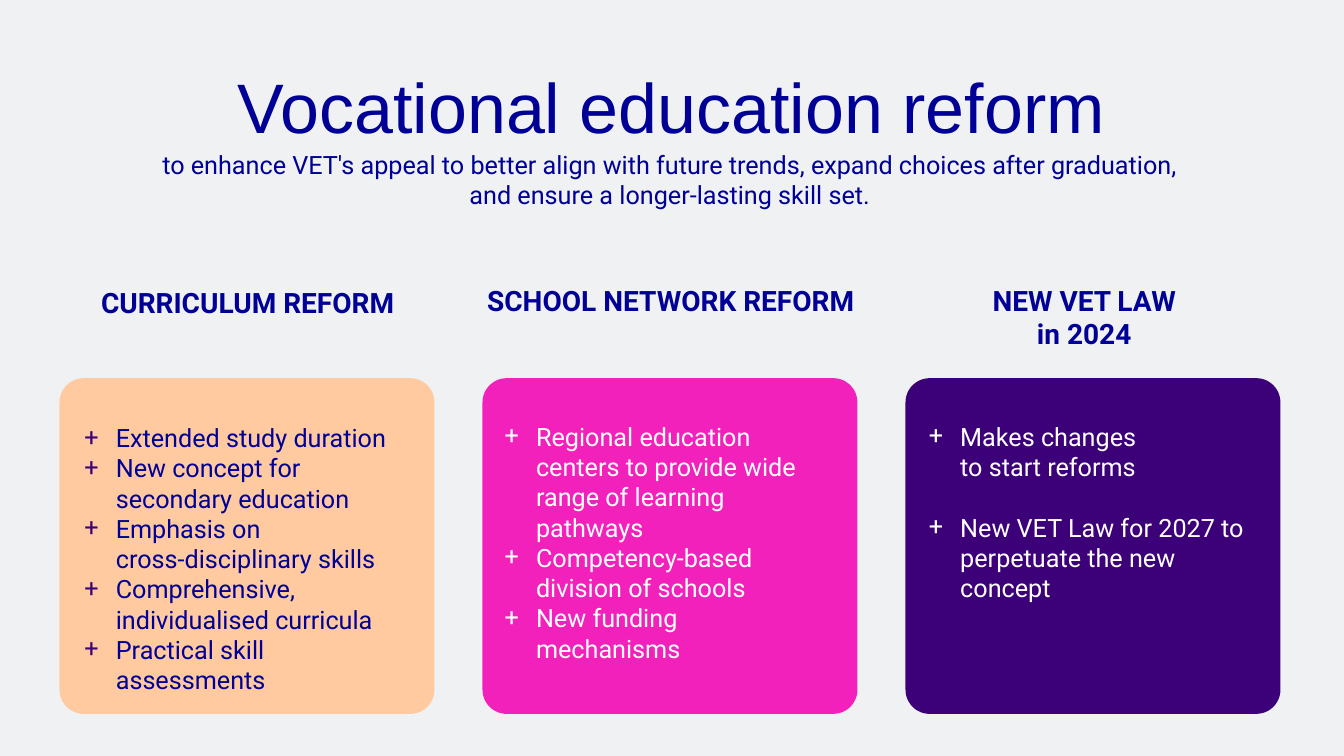
from pptx import Presentation
from pptx import util as u
from pptx.dml.color import RGBColor
from pptx.enum import shapes, text
from pptx.oxml.ns import qn
from lxml import etree

NAVY, PURPLE, WHITE = "000096", "3C0078", "FFFFFF"
PEACH, PINK, PAPER = "FFCA9F", "F321BC", "F0F1F2"


def colour(hex_code):
    return RGBColor.from_string(hex_code)


class ReformSlide:
    body_font = "Roboto"
    title_font = "Arial"
    indent = u.Cm(0.79)

    def __init__(self, deck):
        self.slide = deck.slides.add_slide(deck.slide_layouts[6])
        self.slide.background.fill.solid()
        self.slide.background.fill.fore_color.rgb = colour(PAPER)

    def card(self, left, top, width, height, fill):
        card = self.slide.shapes.add_shape(
            shapes.MSO_SHAPE.ROUNDED_RECTANGLE,
            u.Cm(left), u.Cm(top), u.Cm(width), u.Cm(height))
        card.adjustments[0] = 0.072
        card.shadow.inherit = False
        card.fill.solid()
        card.fill.fore_color.rgb = colour(fill)
        card.line.fill.background()

    def frame(self, left, top, width, height):
        box = self.slide.shapes.add_textbox(
            u.Cm(left), u.Cm(top), u.Cm(width), u.Cm(height))
        box.text_frame.word_wrap = True
        return box.text_frame

    def paragraphs(self, frame, items, size, ink, font=body_font, bold=False):
        """Add one paragraph per item; a newline inside an item is a line break."""
        for number, item in enumerate(items):
            paragraph = frame.add_paragraph() if number else frame.paragraphs[0]
            for row, words in enumerate(item.split("\n")):
                if row:
                    paragraph.add_line_break()
                run = paragraph.add_run()
                run.text = words
                run.font.name = font
                run.font.size = u.Pt(size)
                run.font.bold = bold
                run.font.color.rgb = colour(ink)
        return frame.paragraphs

    def title(self, words, *place):
        frame = self.frame(*place)
        frame.margin_left = frame.margin_right = 0
        frame.margin_top = frame.margin_bottom = 0
        line, = self.paragraphs(frame, [words], 50, NAVY, self.title_font)
        line.alignment = text.PP_ALIGN.CENTER
        line.line_spacing = 0.9

    def centred(self, lines, size, bold, *place):
        frame = self.frame(*place)
        for line in self.paragraphs(frame, lines, size, NAVY, bold=bold):
            line.alignment = text.PP_ALIGN.CENTER

    def plus_list(self, points, ink, plus_ink, gap, *place):
        frame = self.frame(*place)
        for number, point in enumerate(self.paragraphs(frame, points, 18, ink)):
            if number:
                point.space_before = u.Pt(gap)
            properties = point._p.get_or_add_pPr()
            properties.set("marL", str(self.indent))
            properties.set("indent", str(-self.indent))
            bullet_colour = etree.SubElement(properties, qn("a:buClr"))
            etree.SubElement(bullet_colour, qn("a:srgbClr"), val=plus_ink)
            etree.SubElement(properties, qn("a:buFont"), typeface=self.body_font)
            etree.SubElement(properties, qn("a:buChar"), char="+")


# fill, heading, heading place, points, text colour, plus colour, gap, list place
REFORMS = [
    (PEACH, ["CURRICULUM REFORM"], (2.08, 7.06, 8.33, 1.96),
     ["Extended study duration",
      "New concept for secondary education",
      "Emphasis on\ncross-disciplinary skills",
      "Comprehensive, individualised curricula",
      "Practical skill assessments"],
     NAVY, PURPLE, 0, (1.88, 10.52, 8.74, 7.19)),
    (PINK, ["SCHOOL NETWORK REFORM"], (11.61, 7.01, 10.59, 1.96),
     ["Regional education centers to provide wide range of learning pathways",
      "Competency-based division of schools",
      "New funding mechanisms"],
     WHITE, WHITE, 0, (12.47, 10.49, 8.46, 6.4)),
    (PURPLE, ["NEW VET LAW", "in 2024"], (23.16, 7.01, 8.33, 1.96),
     ["Makes changes\nto start reforms",
      "New VET Law for 2027 to perpetuate the new concept"],
     WHITE, WHITE, 21.6, (23.16, 10.49, 8.51, 4.88)),
]
CARD_LEFT, CARD_TOP, CARD_WIDTH, CARD_HEIGHT, CARD_PITCH = 1.5, 9.53, 9.45, 8.46, 10.66


def main():
    deck = Presentation()
    deck.slide_width, deck.slide_height = u.Cm(33.87), u.Cm(19.05)
    page = ReformSlide(deck)
    page.title("Vocational education reform", 1.73, 1.83, 30.4, 2.69)
    page.centred(["to enhance VET's appeal to better align with future trends, "
                  "expand choices after graduation, and ensure a longer-lasting skill set."],
                 18, False, 3.71, 3.63, 26.34, 1.8)
    for column, reform in enumerate(REFORMS):
        fill, heading, heading_place, points, ink, plus_ink, gap, list_place = reform
        page.card(CARD_LEFT + column * CARD_PITCH, CARD_TOP, CARD_WIDTH, CARD_HEIGHT, fill)
        page.centred(heading, 20, True, *heading_place)
        page.plus_list(points, ink, plus_ink, gap, *list_place)
    deck.save("out.pptx")


if __name__ == "__main__":
    main()
